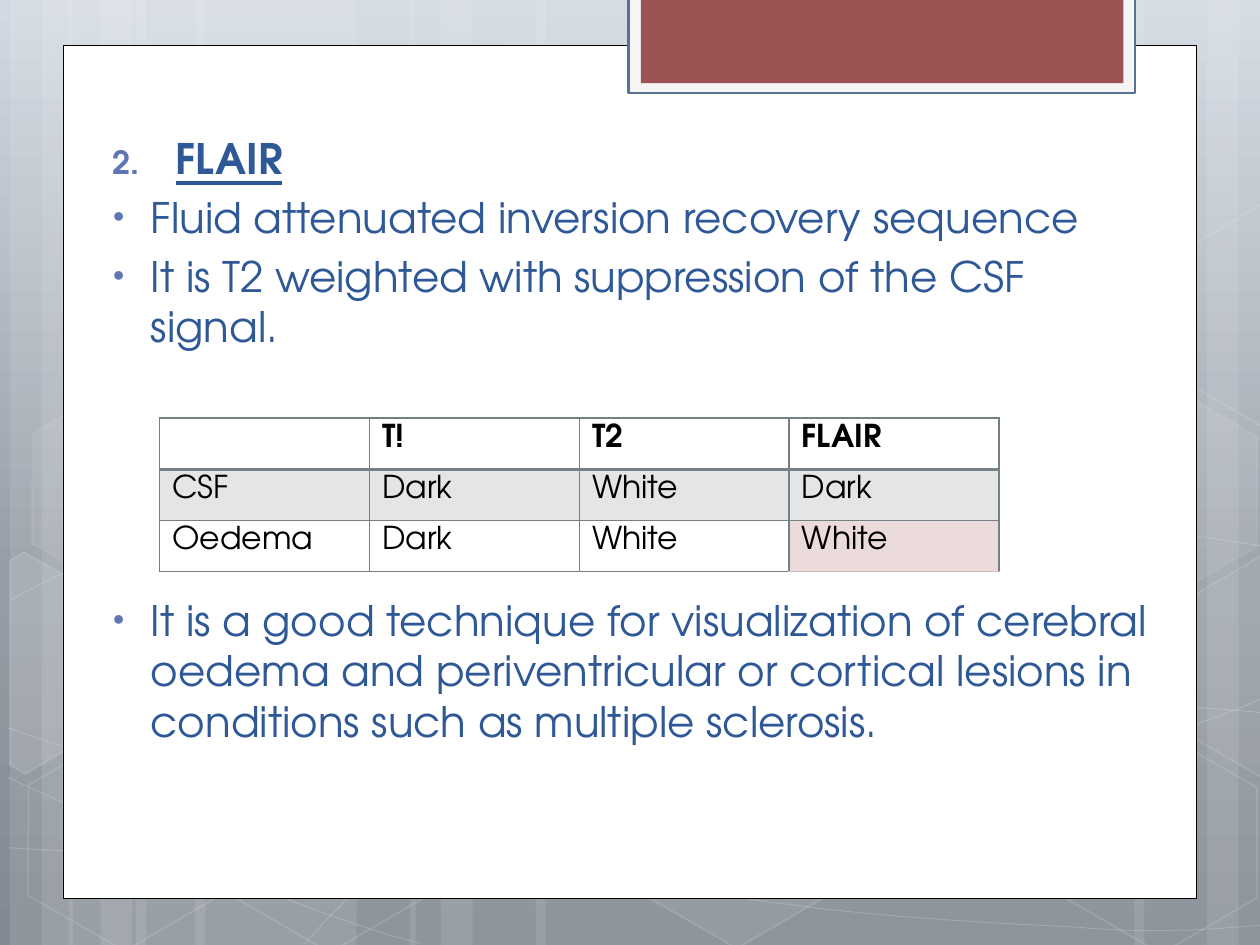
from copy import deepcopy
from math import cos, radians, sin

from lxml import etree
from pptx import Presentation
from pptx.dml.color import RGBColor
from pptx.enum.shapes import MSO_SHAPE
from pptx.oxml.ns import qn
from pptx.util import Cm, Pt

RECT = MSO_SHAPE.RECTANGLE
HEXAGON = MSO_SHAPE.HEXAGON
FONT = "TeX Gyre Adventor"
WHITE = RGBColor(0xFF, 0xFF, 0xFF)
BLACK = RGBColor(0, 0, 0)
BLUE = RGBColor(0x2F, 0x58, 0x97)
BULLET = RGBColor(0x60, 0x76, 0xB4)
FRAME = RGBColor(0x57, 0x72, 0x93)
OFF_WHITE = RGBColor(0xF5, 0xF5, 0xF5)
RED = RGBColor(0x9C, 0x52, 0x52)
GRAY = RGBColor(0x75, 0x80, 0x85)
PINK = RGBColor(0xEC, 0xDB, 0xDB)
PINK_EDGE = RGBColor(0xDA, 0xB8, 0xB8)
TILT = 30

GRADIENT = [(0, RGBColor(0xD2, 0xD9, 0xE2)), (0.62, RGBColor(0x95, 0x9C, 0xA5)),
            (1, RGBColor(0x82, 0x89, 0x92))]
WIDE, THIN, MEDIUM = 4.45, 1.27, 2.11
STRIPES = [(2.74, WIDE, 0), (0.2, THIN, 0), (0.84, MEDIUM, 0),
           (3.93, WIDE, 0), (1.39, THIN, 0), (2.03, MEDIUM, 0),
           (18.62, WIDE, 180), (24.33, THIN, 180), (22.86, MEDIUM, 180),
           (10.8, 7.82, 0), (8.26, THIN, 0), (8.89, MEDIUM, 0)]
CURVES = [
    [(0.18, 17.09), (1.55, 17.17), (2.92, 17.25), (4.83, 17.22), (6.73, 17.2),
     (9.09, 17.15), (11.63, 16.89), (14.17, 16.64), (17.78, 16.15), (20.12, 15.67),
     (22.43, 15.19), (24.82, 14.43), (25.58, 14)],
    [(0.18, 12.12), (0.91, 11.71), (1.65, 11.33), (3.07, 10.95), (4.52, 10.57),
     (6.58, 10.01), (8.81, 9.83), (11.07, 9.65), (13.82, 9.63), (16.61, 9.83),
     (19.41, 10.03), (24.05, 10.82), (25.58, 11.02)],
    [(0.15, 15.67), (3.23, 17.07), (6.27, 18.47), (8.48, 19.02)],
    [(0.18, 14.68), (0.97, 14.96), (1.78, 15.24), (3.25, 15.65), (4.72, 16.03),
     (6.93, 16.66), (9.07, 17.09), (11.18, 17.53), (13.84, 17.98), (15.95, 18.24),
     (18.06, 18.52), (20.32, 18.62), (21.67, 18.69), (22.99, 18.8), (23.34, 18.75),
     (24, 18.75), (24.66, 18.72), (25.12, 18.67), (25.58, 18.64)],
    [(6.15, 19.02), (6.6, 18.52), (7.06, 18.01), (7.67, 17.55), (8.28, 17.09),
     (9.14, 16.59), (9.86, 16.23), (10.57, 15.88), (11, 15.72), (11.94, 15.47),
     (12.85, 15.22), (14.55, 14.86), (15.44, 14.68), (16.36, 14.5), (16.48, 14.5),
     (17.27, 14.45), (18.06, 14.38), (19.3, 14.3), (20.17, 14.27), (21.06, 14.25),
     (22.5, 14.27), (22.5, 14.27), (23.07, 14.27), (23.64, 14.27), (24.21, 14.27),
     (24.66, 14.3), (25.1, 14.33), (25.55, 14.38)],
]
HEXAGONS = [(8.48, 0.91, 4, 8), (12.62, 14.96, 6, 12), (0.28, 15.01, None, 12),
            (0.36, 7.92, 7, 8), (4.42, 15.04, None, 12), (19.13, 11.51, 10, 12),
            (21.18, 15.06, None, 12), (21.18, 7.98, 7, 8)]
LEFT_EDGE = [(0.2, 11.3), (0.48, 11.13), (2.44, 12.24), (2.41, 14.48),
             (0.51, 15.6), (0.2, 15.42)]
RIGHT_EDGE = [(23.52, 12.32), (25.43, 11.2), (25.63, 11.33), (25.63, 15.57),
              (25.45, 15.67), (23.52, 14.55)]
CUT_HEXAGONS = [(LEFT_EDGE, (0.91, 13.59), 10), (RIGHT_EDGE, (25.02, 13.21), 4),
                ([(x, y - 7.08) for x, y in RIGHT_EDGE], (25.02, 6.13), None)]
PANELS = [((1.27, 0.91, 22.86, 17.2), WHITE, BLACK, 0.5),
          ((12.67, -0.05, 10.21, 1.93), OFF_WHITE, FRAME, 1.25),
          ((12.92, -0.05, 9.73, 1.73), RED, None, 0)]
HEADING = "FLAIR"
BULLETS = [
    ("Fluid attenuated inversion recovery sequence", 4.8),
    ("It is T2 weighted with suppression of the CSF signal.", 4.8),
    ("It is a good technique for visualization of cerebral oedema and periventricular "
     "or cortical lesions in conditions such as multiple sclerosis.", 139.2),
]
TABLE = [["", "T!", "T2", "FLAIR"],
         ["CSF", "Dark", "White", "Dark"],
         ["Oedema", "Dark", "White", "White"]]


def fade(parent, percent):
    if percent < 100:
        color = parent.find(qn("a:solidFill"))[0]
        etree.SubElement(color, qn("a:alpha"), val=str(percent * 1000))


def paint(sp, fill=None, line=None, width=1, fill_alpha=100, line_alpha=100):
    sp.shadow.inherit = False
    if fill is None:
        sp.fill.background()
    else:
        sp.fill.solid()
        sp.fill.fore_color.rgb = fill
        fade(sp.element.spPr, fill_alpha or 100)
    if line is None:
        sp.line.fill.background()
    else:
        sp.line.color.rgb = line
        sp.line.width = Pt(width)
        fade(sp.element.spPr.find(qn("a:ln")), line_alpha)


def add_box(s, kind, box):
    return s.shapes.add_shape(kind, *[Cm(v) for v in box])


def add_outline(s, points, close):
    pts = [(Cm(x), Cm(y)) for x, y in points]
    builder = s.shapes.build_freeform(*pts[0])
    builder.add_line_segments(pts[1:], close=close)
    return builder.convert_to_shape()


def add_curve(s, points):
    sp = add_outline(s, points, False)
    outline = sp.element.find(".//" + qn("a:path"))
    for i, segment in enumerate(outline.findall(qn("a:lnTo"))):
        if i % 3 == 0:
            bezier = etree.SubElement(outline, qn("a:cubicBezTo"))
        bezier.append(segment[0])
        outline.remove(segment)
    return sp


def turn_back(points, center):
    cx, cy = center
    c, d = cos(radians(TILT)), sin(radians(TILT))
    return [(cx + (x - cx) * c + (y - cy) * d, cy + (y - cy) * c - (x - cx) * d)
            for x, y in points]


def style(p, size, color, bold=False, underline=False):
    for r in p.runs:
        r.font.name = FONT
        r.font.size = Pt(size)
        r.font.color.rgb = color
        r.font.bold = bold
        r.font.underline = underline


def add_marker(p, left, hang, tag, **attrs):
    pPr = p._p.get_or_add_pPr()
    pPr.set("marL", str(Cm(left)))
    pPr.set("indent", str(-Cm(hang)))
    color = etree.SubElement(pPr, qn("a:buClr"))
    etree.SubElement(color, qn("a:srgbClr"), val=str(BULLET))
    etree.SubElement(pPr, qn("a:buSzPct"), val="76000")
    if tag == "a:buChar":
        etree.SubElement(pPr, qn("a:buFont"), typeface="Arial")
    etree.SubElement(pPr, qn(tag), **attrs)


def add_border(cell, side, color, width):
    ln = etree.SubElement(cell._tc.get_or_add_tcPr(), qn("a:ln" + side), w=str(Pt(width)))
    fill = etree.SubElement(ln, qn("a:solidFill"))
    etree.SubElement(fill, qn("a:srgbClr"), val=str(color))


def add_background(s):
    fill = s.background.fill
    fill.gradient()
    fill.gradient_angle = 270
    stops = s.element.find(".//" + qn("a:gsLst"))
    stops.append(deepcopy(stops[0]))
    for stop, (position, color) in zip(fill.gradient_stops, GRADIENT):
        stop.position = position
        stop.color.rgb = color
    for left, width, turn in STRIPES:
        sp = add_box(s, RECT, (left, 0, width, 19.05))
        sp.rotation = turn
        paint(sp, WHITE, fill_alpha=10)
    for points in CURVES:
        paint(add_curve(s, points), None, WHITE, 0.5, line_alpha=20)
    for left, top, fill_alpha, line_alpha in HEXAGONS:
        sp = add_box(s, HEXAGON, (left, top, 4.45, 3.86))
        sp.adjustments[0] = 0.285
        sp.rotation = TILT
        paint(sp, WHITE if fill_alpha else None, WHITE, 1, fill_alpha, line_alpha)
    for points, center, fill_alpha in CUT_HEXAGONS:
        sp = add_outline(s, turn_back(points, center), True)
        sp.rotation = TILT
        paint(sp, WHITE if fill_alpha else None, WHITE, 1, fill_alpha, 12)
    for box, fill, line, width in PANELS:
        paint(add_box(s, RECT, box), fill, line, width)


def add_body(s):
    tf = s.shapes.add_textbox(Cm(1.84), Cm(2.55), Cm(21.67), Cm(14.83)).text_frame
    tf.word_wrap = True
    tf.text = "\n".join([HEADING] + [text for text, gap in BULLETS])
    heading, *items = tf.paragraphs
    heading.space_before = Pt(4.8)
    add_marker(heading, 1.45, 1.27, "a:buAutoNum", type="arabicPeriod", startAt="2")
    style(heading, 24, BLUE, True, True)
    for p, (text, gap) in zip(items, BULLETS):
        p.space_before = Pt(gap)
        add_marker(p, 0.95, 0.76, "a:buChar", char="•")
        style(p, 24, BLUE)


def add_signal_table(s):
    rows, cols = len(TABLE), len(TABLE[0])
    table = s.shapes.add_table(rows, cols, Cm(3.22), Cm(8.43),
                               Cm(4.23 * cols), Cm(1.03 * rows)).table
    table.horz_banding = False
    table.first_row = False
    for i, row in enumerate(TABLE):
        for j, text in enumerate(row):
            cell = table.cell(i, j)
            last = (i, j) == (rows - 1, cols - 1)
            cell.text = text
            style(cell.text_frame.paragraphs[0], 18, BLACK, bold=i == 0)
            for side in "LRTB":
                heavy = (i, side) in ((0, "B"), (1, "T"))
                add_border(cell, side, PINK_EDGE if last and side == "B" else GRAY,
                           2 if heavy else 1)
            if i == 1 or last:
                cell.fill.solid()
                cell.fill.fore_color.rgb = PINK if last else GRAY
                fade(cell._tc.tcPr, 100 if last else 20)
            else:
                cell.fill.background()


def main():
    prs = Presentation()
    prs.slide_width, prs.slide_height = Cm(25.4), Cm(19.05)
    s = prs.slides.add_slide(prs.slide_layouts[6])
    add_background(s)
    add_body(s)
    add_signal_table(s)
    prs.save("out.pptx")


if __name__ == "__main__":
    main()
